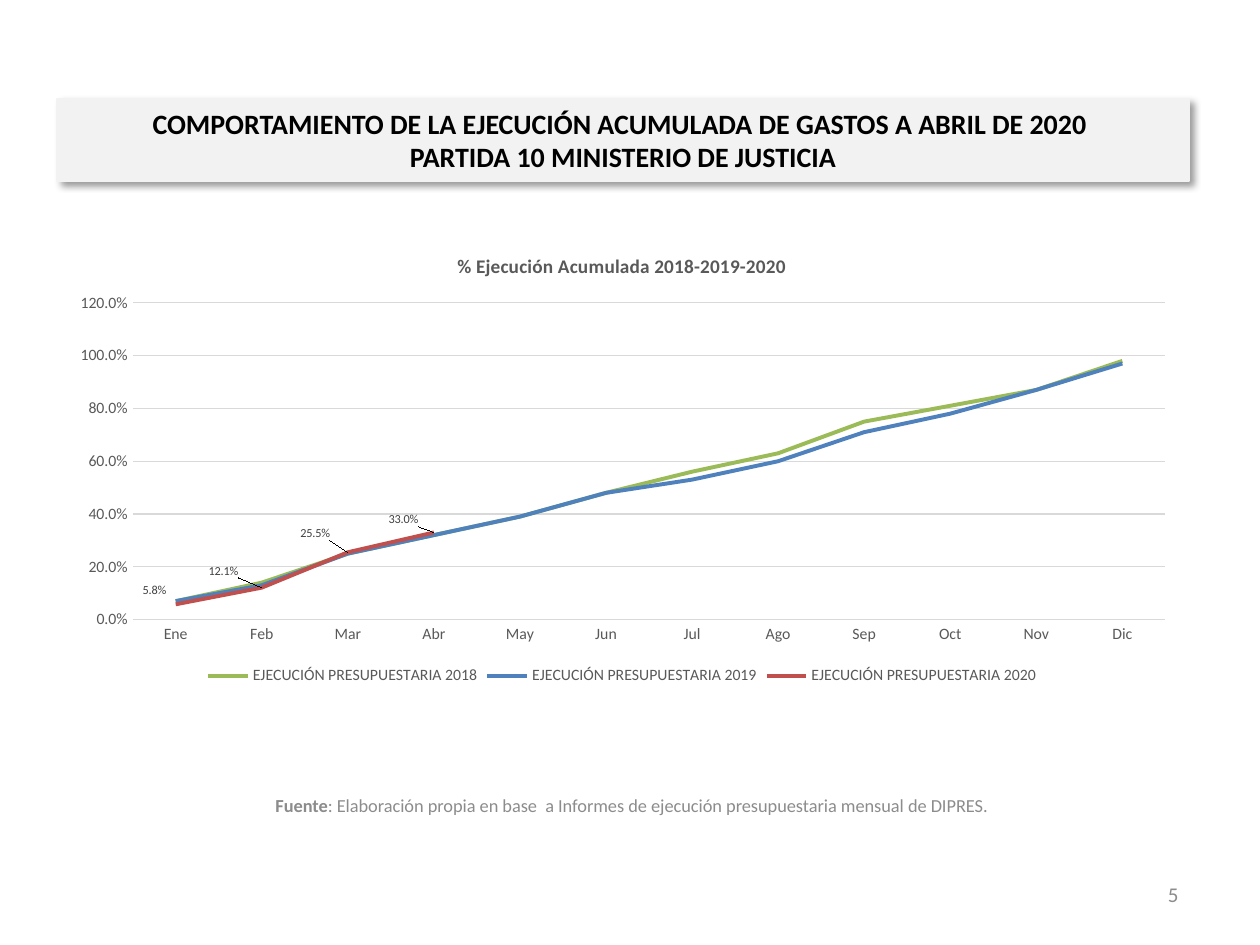
from lxml.etree import SubElement
from pptx import Presentation
from pptx.chart.data import CategoryChartData
from pptx.dml.color import RGBColor
from pptx.enum.chart import XL_CHART_TYPE as Kind, XL_LABEL_POSITION as Spot
from pptx.enum.chart import XL_LEGEND_POSITION as Side, XL_TICK_MARK as Tick
from pptx.enum.text import MSO_ANCHOR as Anchor, PP_ALIGN as Align
from pptx.oxml import parse_xml
from pptx.oxml.ns import nsdecls, qn
from pptx.util import Emu, Pt

SCALE = 914400 / 126
FACE = "Calibri"
BLACK = RGBColor(0x00, 0x00, 0x00)
DARK = RGBColor(0x40, 0x40, 0x40)
SLATE = RGBColor(0x59, 0x59, 0x59)
GREY = RGBColor(0x8C, 0x8C, 0x8C)
RULE = RGBColor(0xD9, 0xD9, 0xD9)
PALE = RGBColor(0xF2, 0xF2, 0xF2)
GREEN = RGBColor(0x9B, 0xBB, 0x59)
BLUE = RGBColor(0x4F, 0x81, 0xBD)
RED = RGBColor(0xC0, 0x50, 0x4D)

MONTHS = "Ene Feb Mar Abr May Jun Jul Ago Sep Oct Nov Dic".split()
YEARS = {
    2018: (GREEN, [0.07, 0.14, 0.25, 0.32, 0.39, 0.48,
                   0.56, 0.63, 0.75, 0.81, 0.87, 0.98]),
    2019: (BLUE, [0.07, 0.13, 0.25, 0.32, 0.39, 0.48,
                  0.53, 0.6, 0.71, 0.78, 0.87, 0.97]),
    2020: (RED, [0.058, 0.121, 0.255, 0.33]),
}
# Shift of each 2020 label from its place above the point, in px
SHIFTS = [(-22, -2), (-38, -5), (-33, -7), (-31, -1)]


def px(n):
    return Emu(round(n * SCALE))


def style(font, size, color, bold=False):
    looks = {"name": FACE, "size": Pt(size), "bold": bold}
    for key, value in looks.items():
        setattr(font, key, value)
    font.color.rgb = color


def stroke(line, color, width):
    line.color.rgb = color
    line.width = Pt(width)


def layout(**parts):
    """Manual chart layout from its named values."""
    node = parse_xml(f"<c:layout {nsdecls('c')}/>")
    manual = SubElement(node, qn("c:manualLayout"))
    for key, value in parts.items():
        text = value if isinstance(value, str) else f"{value:.3f}"
        SubElement(manual, qn(f"c:{key}")).set("val", text)
    return node


def add_note(slide, box, runs, size, align):
    """Grey line of text; runs are (text, bold) pairs."""
    frame = slide.shapes.add_textbox(*map(px, box)).text_frame
    frame.word_wrap = True
    frame.vertical_anchor = Anchor.MIDDLE
    para = frame.paragraphs[0]
    para.alignment = align
    for text, bold in runs:
        run = para.add_run()
        run.text = text
        style(run.font, size, GREY, bold)


def add_banner(slide, box, text):
    title = slide.shapes.title
    for key, n in zip(("left", "top", "width", "height"), box):
        setattr(title, key, px(n))
    title.fill.solid()
    title.fill.fore_color.rgb = PALE
    stroke(title.line, PALE, 0.75)
    title._element.spPr.append(parse_xml(
        f'<a:effectLst {nsdecls("a")}>'
        '<a:outerShdw blurRad="50800" dist="38100" dir="2700000" '
        'algn="tl" rotWithShape="0"><a:srgbClr val="000000">'
        '<a:alpha val="40000"/></a:srgbClr></a:outerShdw></a:effectLst>'))
    frame = title.text_frame
    frame.text = text
    frame.word_wrap = True
    frame.vertical_anchor = Anchor.MIDDLE
    para = frame.paragraphs[0]
    para.alignment = Align.CENTER
    for run in para.runs:
        style(run.font, 16, BLACK, True)


def add_lines(slide, box, heading):
    data = CategoryChartData(number_format="0.0%")
    data.categories = MONTHS
    for year, (_, values) in YEARS.items():
        data.add_series(f"EJECUCIÓN PRESUPUESTARIA {year}", values)
    chart = slide.shapes.add_chart(Kind.LINE, *map(px, box), data).chart
    wide, high = box[2:]
    style(chart.font, 10, BLACK)

    # Heading and legend
    frame = chart.chart_title.text_frame
    frame.text = heading
    style(frame.paragraphs[0].runs[0].font, 11, SLATE, True)
    chart.chart_title.include_in_layout = False
    chart.has_legend = True
    chart.legend.position = Side.BOTTOM
    chart.legend.include_in_layout = False
    style(chart.legend.font, 9, SLATE)

    # Axes
    months, share = chart.category_axis, chart.value_axis
    for axis in (months, share):
        axis.major_tick_mark = axis.minor_tick_mark = Tick.NONE
        style(axis.tick_labels.font, 9, SLATE)
    stroke(months.format.line, RULE, 0.75)
    share.format.line.fill.background()
    stroke(share.major_gridlines.format.line, RULE, 0.75)
    share.minimum_scale, share.maximum_scale = 0, 1.2
    share.major_unit = 0.2
    share.tick_labels.number_format = "0.0%"
    share.tick_labels.number_format_is_linked = False

    # Series
    plot = chart.plots[0]
    plot.vary_by_categories = False
    for line, (color, _) in zip(plot.series, YEARS.values()):
        line.smooth = False
        stroke(line.format.line, color, 2.25)

    # Labels of the current year
    now = plot.series[-1]
    for i, (dx, dy) in enumerate(SHIFTS):
        label = now.points[i].data_label
        style(label.font, 7, DARK)
        label.position = Spot.ABOVE
        node = now.data_labels._element.findall(qn("c:dLbl"))[i]
        node.insert(1, layout(x=dx / wide, y=dy / high))
    labels = now.data_labels
    style(labels.font, 7, DARK)
    labels.number_format = "0.0%"
    labels.number_format_is_linked = False
    labels.show_value = True

    # Plot area
    area = chart._chartSpace.chart.plotArea
    for old in area.findall(qn("c:layout")):
        area.remove(old)
    area.insert(0, layout(layoutTarget="inner", xMode="edge", yMode="edge",
                          x=76 / wide, y=69 / high,
                          w=1033 / wide, h=317 / high))


def main():
    deck = Presentation()
    deck.slide_width, deck.slide_height = px(1260), px(945)
    slide = deck.slides.add_slide(deck.slide_layouts[5])
    add_note(slide, (897, 869, 294, 50), [("5", False)], 12, Align.RIGHT)
    add_banner(slide, (57, 99, 1132, 82),
               "COMPORTAMIENTO DE LA EJECUCIÓN ACUMULADA DE GASTOS "
               "A ABRIL DE 2020 \vPARTIDA 10 MINISTERIO DE JUSTICIA")
    add_note(slide, (53, 780, 1158, 50),
             [("Fuente", True),
              (": Elaboración propia en base  a Informes de ejecución "
               "presupuestaria mensual de DIPRES.", False)],
             10.5, Align.CENTER)
    add_lines(slide, (57, 234, 1130, 456),
              "% Ejecución Acumulada 2018-2019-2020")
    deck.save("out.pptx")


if __name__ == "__main__":
    main()
